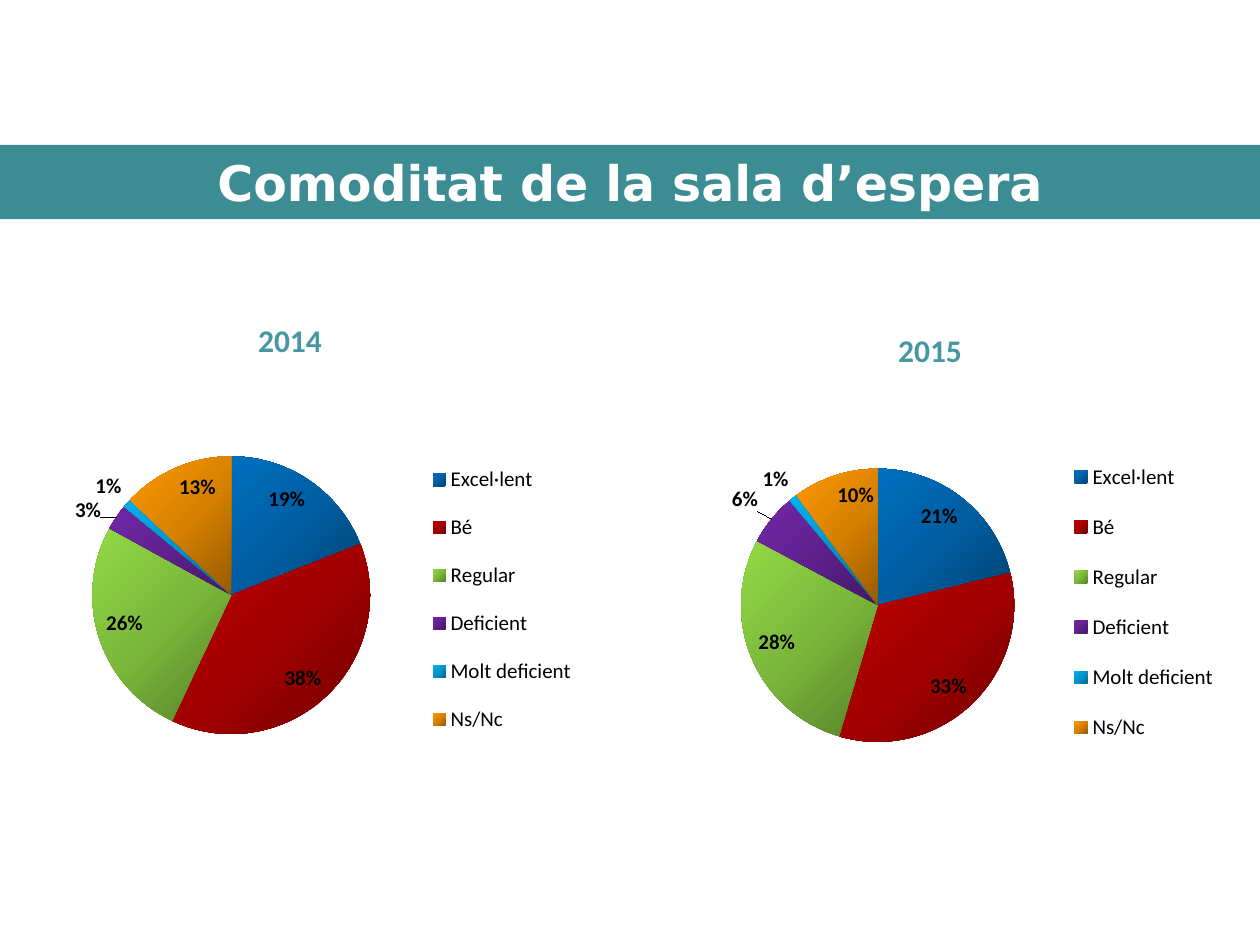
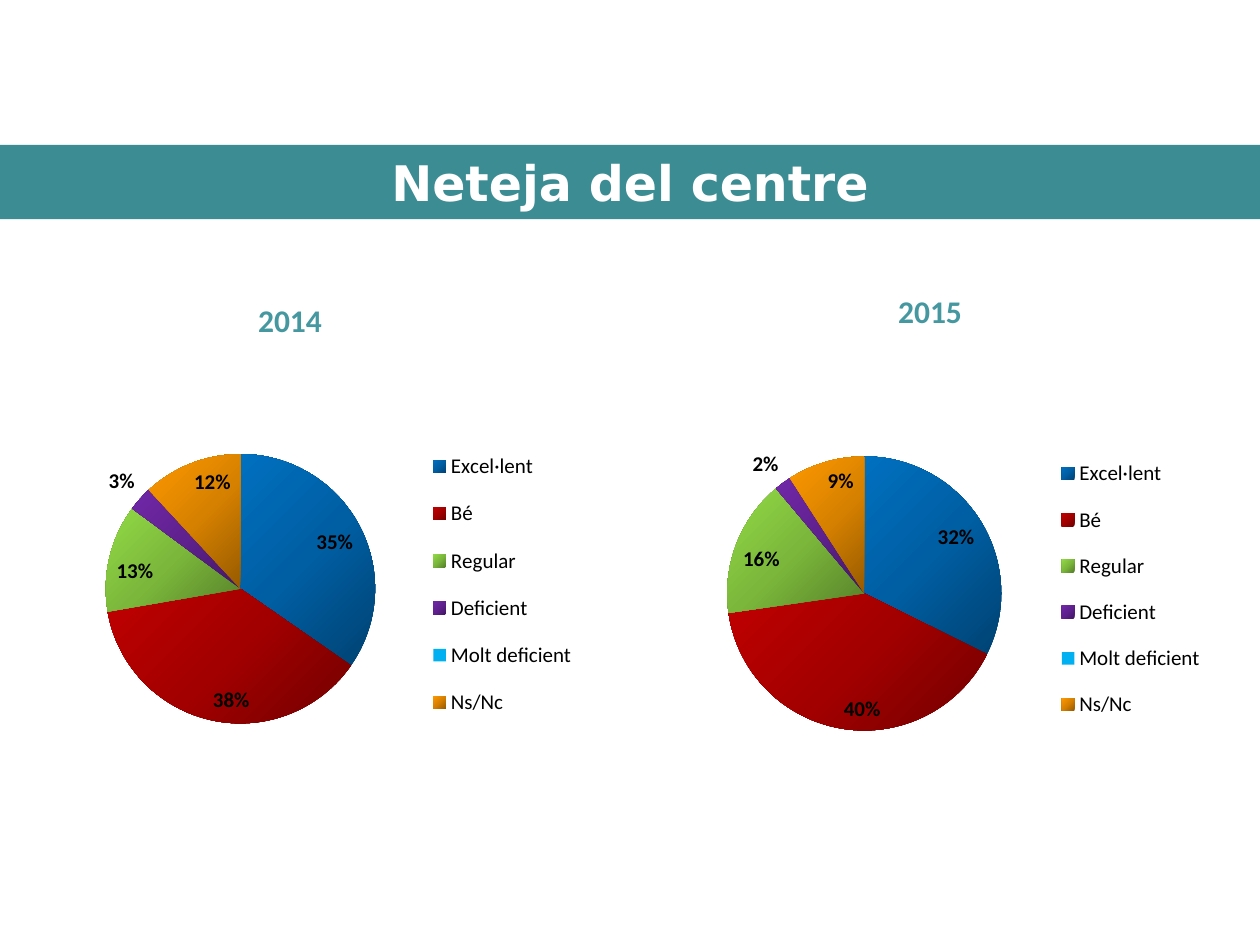
import copy

import pptx
import pptx.chart.data
import pptx.dml.color
import pptx.enum.chart
import pptx.enum.shapes
import pptx.enum.text
import pptx.oxml
import pptx.oxml.ns
import pptx.util

Inches = pptx.util.Inches
Pt = pptx.util.Pt

BAND = "3C8C93"
YEAR = "4597A0"
WHITE = "FFFFFF"
BLACK = "000000"
# Dark, middle and bright shade of each answer
RATINGS = {
    "Excel·lent": ("004272", "005EA2", "0070C0"),
    "Bé": ("720000", "A20000", "C00000"),
    "Regular": ("57812A", "7BB73B", "92DA46"),
    "Deficient": ("431764", "5F218E", "7128A8"),
    "Molt deficient": ("00688E", "0094CA", "00B0F0"),
    "Ns/Nc": ("975B00", "D78100", "FF9900"),
}
FLAT = "00B0F0"
SMALL = (3, 4)  # slices labelled outside the pie


def color(text):
    return pptx.dml.color.RGBColor.from_string(text)


def layout(x, y, w=None, h=None, inner=False):
    """Return a manual chart layout, in fractions of the chart."""
    parts = ['<c:layoutTarget val="inner"/>'] if inner else []
    if w:
        parts += ['<c:xMode val="edge"/><c:yMode val="edge"/>']
    parts += [f'<c:{tag} val="{size}"/>'
              for tag, size in zip("xywh", (x, y, w, h)) if size is not None]
    space = pptx.oxml.ns.nsdecls("c")
    return pptx.oxml.parse_xml(
        f"<c:layout {space}><c:manualLayout>{''.join(parts)}"
        "</c:manualLayout></c:layout>")


def place(node, box):
    """Swap the layout of a chart part for the given one."""
    for old in node.findall(pptx.oxml.ns.qn("c:layout")):
        node.remove(old)
    spot = 0 if node.tag == pptx.oxml.ns.qn("c:plotArea") else 1
    node.insert(spot, box)


class Deck:
    def __init__(self):
        self.show = pptx.Presentation()
        self.show.slide_width = Inches(10)
        self.show.slide_height = Inches(7.5)
        self.slide = None

    def page(self, title):
        self.slide = self.show.slides.add_slide(self.show.slide_layouts[6])
        self.band(title)

    def style(self, font, name, size, tone, bold=False):
        font.name = name
        font.size = Pt(size)
        font.bold = bold
        font.color.rgb = color(tone)

    def band(self, title):
        band = self.slide.shapes.add_shape(
            pptx.enum.shapes.MSO_SHAPE.RECTANGLE,
            Inches(0), Inches(1.15), Inches(10), Inches(0.59))
        band.shadow.inherit = False
        band.fill.solid()
        band.fill.fore_color.rgb = color(BAND)
        band.line.fill.background()
        frame = band.text_frame
        frame.vertical_anchor = pptx.enum.text.MSO_ANCHOR.MIDDLE
        line = frame.paragraphs[0]
        line.text = title
        line.alignment = pptx.enum.text.PP_ALIGN.CENTER
        self.style(line.font, "DejaVu Sans", 28, WHITE, True)

    def year(self, text, left, top):
        box = self.slide.shapes.add_textbox(
            Inches(left), Inches(top), Inches(1.41), Inches(0.4))
        frame = box.text_frame
        frame.word_wrap = True
        frame.auto_size = pptx.enum.text.MSO_AUTO_SIZE.SHAPE_TO_FIT_TEXT
        line = frame.paragraphs[0]
        line.text = text
        self.style(line.font, "Calibri", 18, YEAR, True)

    def shade(self, point, tones):
        """Fill a slice with three stops, bright at the upper left."""
        fill = point.format.fill
        fill.gradient()
        fill.gradient_angle = 135
        stops = point.format._element.spPr.find(".//" + pptx.oxml.ns.qn("a:gsLst"))
        stops.append(copy.deepcopy(stops[-1]))
        for stop, tone, spot in zip(fill.gradient_stops, tones, (0, 0.5, 1)):
            stop.color.rgb = color(tone)
            stop.position = spot

    def pie(self, box, values, plot, key, flat, moves):
        """Draw a pie; moves maps a slice to the shift of its label."""
        data = pptx.chart.data.CategoryChartData()
        data.categories = list(RATINGS)
        data.add_series("Series 1", values)
        kinds = pptx.enum.chart
        chart = self.slide.shapes.add_chart(
            kinds.XL_CHART_TYPE.PIE, *map(Inches, box), data).chart
        self.style(chart.font, "Arial", 18, BLACK)
        chart.has_title = False
        chart.has_legend = True
        legend = chart.legend
        legend.position = kinds.XL_LEGEND_POSITION.RIGHT
        legend.include_in_layout = False
        self.style(legend.font, "Calibri", 12, BLACK)
        place(legend._element, layout(*key))
        pie = chart.plots[0]
        pie.vary_by_categories = True
        place(pie._element.getparent(), layout(*plot, inner=True))

        series = pie.series[0]
        for spot, tones in enumerate(RATINGS.values()):
            point = series.points[spot]
            if flat and spot == 4:
                point.format.fill.solid()
                point.format.fill.fore_color.rgb = color(FLAT)
            else:
                self.shade(point, tones)

        labels = series.data_labels
        labels.show_percentage = True
        labels.show_value = False
        labels.number_format = "0%"
        labels.number_format_is_linked = False
        labels.position = kinds.XL_LABEL_POSITION.INSIDE_END
        self.style(labels.font, "Calibri", 12, BLACK, True)
        for spot in SMALL:
            label = series.points[spot].data_label
            self.style(label.font, "Calibri", 12, BLACK, True)
            label.position = kinds.XL_LABEL_POSITION.OUTSIDE_END
        for node in series._element.xpath(".//c:dLbl"):
            node.find(pptx.oxml.ns.qn("c:showVal")).set("val", "0")
            node.find(pptx.oxml.ns.qn("c:showPercent")).set("val", "1")
            shift = moves.get(int(node.xpath("./c:idx/@val")[0]))
            if shift:
                place(node, layout(*shift))


def main():
    deck = Deck()

    deck.page("Comoditat de la sala d’espera")
    plot = (0.149, 0.094, 0.448, 0.774)
    deck.pie((0, 2.81, 4.92, 3.98), (19, 38, 26, 3, 1, 13), plot,
             (0.67, 0.18, 0.28, 0.62), False, {3: (-0.015, 0.02)})
    deck.pie((5.16, 2.89, 4.84, 3.98), (21, 33, 28, 6, 1, 10), plot,
             (0.67, 0.15, 0.28, 0.65), False, {3: (-0.013, -0.006)})
    deck.year("2014", 1.95, 2.5)
    deck.year("2015", 7.03, 2.58)

    deck.page("Neteja del centre")
    plot = (0.15, 0.121, 0.472, 0.817)
    key = (0.7, 0.19, 0.29, 0.66)
    deck.pie((0.16, 2.73, 4.53, 3.67), (35, 38, 13, 3, None, 12), plot,
             key, True, {})
    deck.pie((5.08, 2.81, 4.61, 3.59), (32, 40, 16, 2, 0, 9), plot,
             key, True, {4: (0.012, -0.04)})
    deck.year("2014", 1.95, 2.34)
    deck.year("2015", 7.03, 2.27)

    deck.show.save("out.pptx")


if __name__ == "__main__":
    main()
